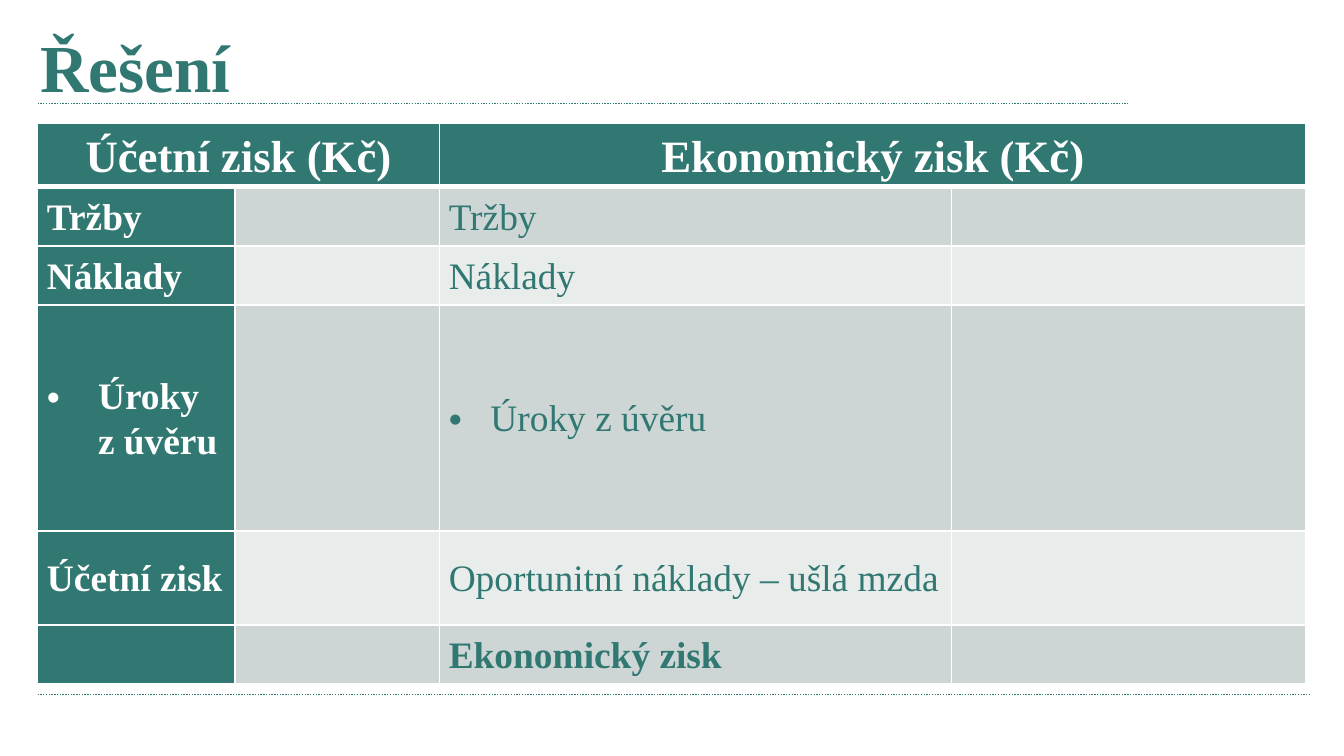
from typing import NamedTuple

from lxml import etree
from pptx import Presentation
from pptx.dml.color import RGBColor
from pptx.enum.dml import MSO_LINE
from pptx.enum.shapes import MSO_CONNECTOR
from pptx.enum.text import MSO_ANCHOR, MSO_AUTO_SIZE, PP_ALIGN
from pptx.oxml.ns import qn
from pptx.util import Inches, Pt

STRAIGHT = MSO_CONNECTOR.STRAIGHT
DOTTED = MSO_LINE.ROUND_DOT
TOP, MIDDLE = MSO_ANCHOR.TOP, MSO_ANCHOR.MIDDLE
NO_AUTOFIT = MSO_AUTO_SIZE.NONE
LEFT, CENTER, JUSTIFY = PP_ALIGN.LEFT, PP_ALIGN.CENTER, PP_ALIGN.JUSTIFY

COLORS = {"teal": "307871", "white": "FFFFFF", "band_dark": "CDD6D5", "band_light": "E8ECEB"}
FONT = "Times New Roman"
MARGIN = 0.28
COL_WIDTHS = [1.47, 1.52, 3.81, 2.64]
ROW_HEIGHTS = [0.47, 0.44, 0.44, 1.68, 0.7, 0.44]


class Rule(NamedTuple):
    right: float
    y: float


class Entry(NamedTuple):
    text: str
    bold: bool = False
    indent: float = 0  # hanging indent of a bulleted entry, 0 for none


RULES = [Rule(8.39, 0.77), Rule(9.75, 5.17)]
HEADERS = ["Účetní zisk (Kč)", "Ekonomický zisk (Kč)"]
NBSP = chr(160)  # keeps the Czech preposition with its noun
ROWS = [
    (Entry("Tržby", True), Entry("Tržby")),
    (Entry("Náklady", True), Entry("Náklady")),
    (Entry(f"Úroky z{NBSP}úvěru", True, 0.38), Entry("Úroky z úvěru", indent=0.31)),
    (Entry("Účetní zisk", True), Entry("Oportunitní náklady – ušlá mzda")),
    (None, Entry("Ekonomický zisk", True)),
]


def rgb(name: str) -> RGBColor:
    return RGBColor.from_string(COLORS[name])


def set_font(p, size: float, color: str, bold: bool) -> None:
    f = p.font
    f.name, f.size, f.bold = FONT, Pt(size), bold
    f.color.rgb = rgb(color)


def add_rule(slide, rule: Rule) -> None:
    line = slide.shapes.add_connector(
        STRAIGHT, Inches(MARGIN), Inches(rule.y), Inches(rule.right), Inches(rule.y))
    line.line.color.rgb = rgb("teal")
    line.line.width = Pt(0.75)
    line.line.dash_style = DOTTED
    etree.SubElement(line.element.spPr, qn("a:effectLst"))


def add_title(slide, text: str) -> None:
    sp = slide.shapes.title
    sp.left, sp.top, sp.width, sp.height = map(Inches, (0.2, 0.14, 8.82, 0.79))
    tf = sp.text_frame
    tf.text = text
    tf.word_wrap, tf.auto_size, tf.vertical_anchor = True, NO_AUTOFIT, TOP
    p = tf.paragraphs[0]
    p.alignment = LEFT
    set_font(p, 36, "teal", True)


def style_cell(cell, fill: str, top: float = 1, bottom: float = 1) -> None:
    """Fill the cell and give it white borders; top and bottom are in points."""
    cell.fill.solid()
    cell.fill.fore_color.rgb = rgb(fill)
    tc_pr = cell._tc.get_or_add_tcPr()
    widths = {"lnL": 1, "lnR": 1, "lnT": top, "lnB": bottom}
    for i, (tag, width) in enumerate(widths.items()):
        ln = etree.Element(qn(f"a:{tag}"), w=str(Pt(width)))
        solid = etree.SubElement(ln, qn("a:solidFill"))
        etree.SubElement(solid, qn("a:srgbClr"), val=COLORS["white"])
        tc_pr.insert(i, ln)


def write_cell(cell, entry: Entry, size: float, color: str, align: PP_ALIGN) -> None:
    cell.text = entry.text
    cell.vertical_anchor = MIDDLE
    cell.margin_left = cell.margin_right = Inches(0.07)
    cell.margin_top = cell.margin_bottom = 0
    p = cell.text_frame.paragraphs[0]
    if entry.indent:
        p_pr = p._p.get_or_add_pPr()
        p_pr.set("marL", str(Inches(entry.indent)))
        p_pr.set("indent", str(-Inches(entry.indent)))
        etree.SubElement(p_pr, qn("a:buFont"), typeface="Arial")
        etree.SubElement(p_pr, qn("a:buChar"), char="•")
    p.alignment = align
    p.line_spacing = 1.07
    set_font(p, size, color, entry.bold)


def add_profit_table(slide) -> None:
    table = slide.shapes.add_table(
        len(ROW_HEIGHTS), len(COL_WIDTHS), Inches(MARGIN), Inches(0.92),
        Inches(sum(COL_WIDTHS)), Inches(sum(ROW_HEIGHTS))).table
    table.first_row = table.horz_banding = False
    for column, width in zip(table.columns, COL_WIDTHS):
        column.width = Inches(width)
    for row, height in zip(table.rows, ROW_HEIGHTS):
        row.height = Inches(height)

    for c in range(len(COL_WIDTHS)):
        style_cell(table.cell(0, c), "teal", bottom=3)
    for i, header in enumerate(HEADERS):
        cell = table.cell(0, 2 * i)
        cell.merge(table.cell(0, 2 * i + 1))
        write_cell(cell, Entry(header, True), 24, "white", CENTER)

    for r, (accounting, economic) in enumerate(ROWS, start=1):
        band = "band_dark" if r % 2 else "band_light"
        for c in range(len(COL_WIDTHS)):
            style_cell(table.cell(r, c), band if c else "teal", top=3 if r == 1 else 1)
        if accounting:
            write_cell(table.cell(r, 0), accounting, 20, "white", JUSTIFY)
        write_cell(table.cell(r, 2), economic, 20, "teal", JUSTIFY)


def main() -> None:
    prs = Presentation()
    prs.slide_width = Inches(10)
    prs.slide_height = prs.slide_width * 9 // 16
    slide = prs.slides.add_slide(prs.slide_layouts[5])
    for rule in RULES:
        add_rule(slide, rule)
    add_title(slide, "Řešení")
    add_profit_table(slide)
    prs.save("out.pptx")


if __name__ == "__main__":
    main()
